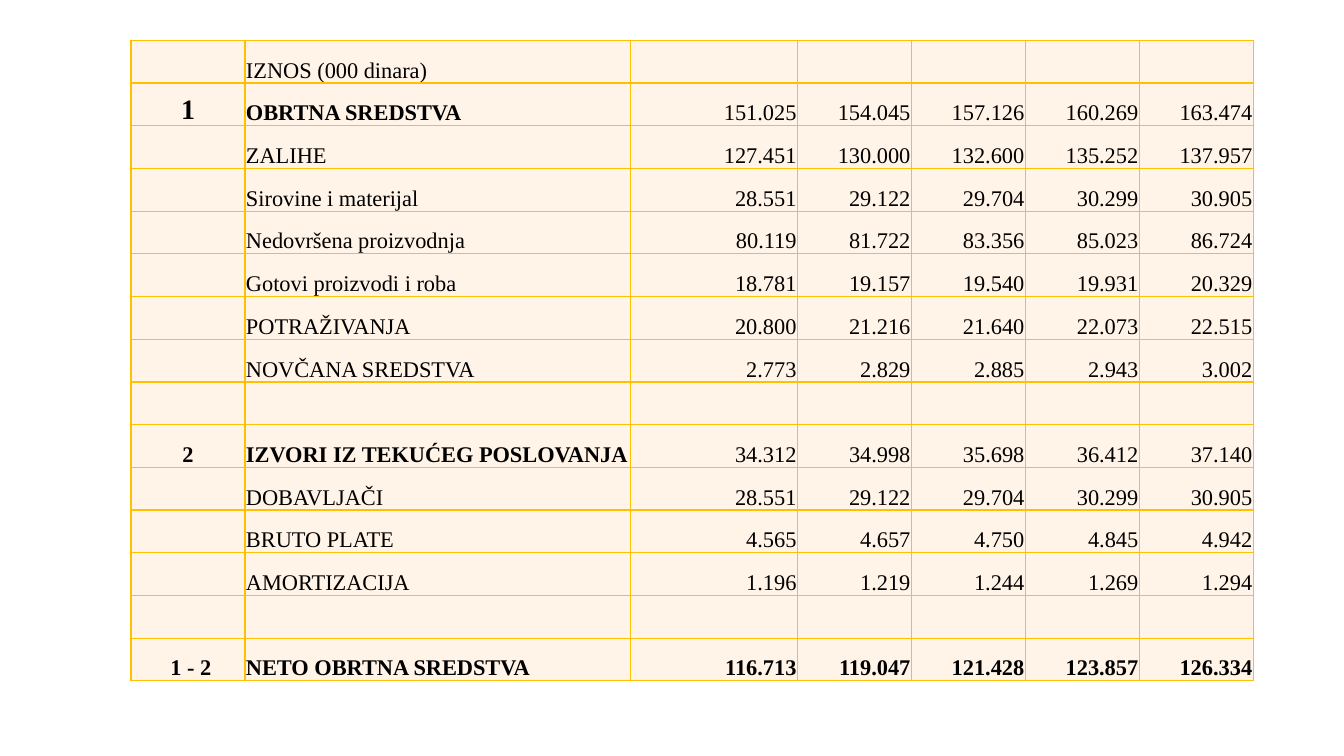
from lxml.etree import SubElement
from pptx import Presentation
from pptx.dml.color import RGBColor
from pptx.enum.text import MSO_ANCHOR, PP_ALIGN
from pptx.oxml.ns import qn
from pptx.util import Inches, Pt

COLORS = {"fill": "FFF4E7", "line": "FFC000", "text": "000000"}
FONT = "Times New Roman"
WIDTHS = [1.13, 3.82, 1.66] + [1.13] * 4
ROWS = [
    ("", "IZNOS (000 dinara)", ""),
    ("1", "OBRTNA SREDSTVA", "151.025 154.045 157.126 160.269 163.474"),
    ("", "ZALIHE", "127.451 130.000 132.600 135.252 137.957"),
    ("", "Sirovine i materijal", "28.551 29.122 29.704 30.299 30.905"),
    ("", "Nedovršena proizvodnja", "80.119 81.722 83.356 85.023 86.724"),
    ("", "Gotovi proizvodi i roba", "18.781 19.157 19.540 19.931 20.329"),
    ("", "POTRAŽIVANJA", "20.800 21.216 21.640 22.073 22.515"),
    ("", "NOVČANA SREDSTVA", "2.773 2.829 2.885 2.943 3.002"),
    ("", "", ""),
    ("2", "IZVORI IZ TEKUĆEG POSLOVANJA", "34.312 34.998 35.698 36.412 37.140"),
    ("", "DOBAVLJAČI", "28.551 29.122 29.704 30.299 30.905"),
    ("", "BRUTO PLATE", "4.565 4.657 4.750 4.845 4.942"),
    ("", "AMORTIZACIJA", "1.196 1.219 1.244 1.269 1.294"),
    ("", "", ""),
    (" 1 - 2", "NETO OBRTNA SREDSTVA", "116.713 119.047 121.428 123.857 126.334"),
]


def add_border(cell):
    props = cell._tc.get_or_add_tcPr()
    for side in ("lnL", "lnR", "lnT", "lnB"):
        line = SubElement(props, qn(f"a:{side}"), w=str(Pt(1)))
        fill = SubElement(line, qn("a:solidFill"))
        SubElement(fill, qn("a:srgbClr"), val=COLORS["line"])


# Slide
prs = Presentation()
prs.slide_width, prs.slide_height = Inches(13.33), Inches(7.5)
slide = prs.slides.add_slide(prs.slide_layouts[6])

# Table grid
frame = slide.shapes.add_table(len(ROWS), len(WIDTHS), Inches(1.3), Inches(0.4),
                               Inches(sum(WIDTHS)), Inches(6.36))
table = frame.table
table.first_row = table.horz_banding = False
for col, width in zip(table.columns, WIDTHS):
    col.width = Inches(width)

# Cells: number, label, then five amounts
for r, (num, label, sums) in enumerate(ROWS):
    texts = [num, label] + (sums.split() or [""] * 5)
    for c, text in enumerate(texts):
        cell = table.cell(r, c)
        add_border(cell)
        cell.fill.solid()
        cell.fill.fore_color.rgb = RGBColor.from_string(COLORS["fill"])
        cell.vertical_anchor = MSO_ANCHOR.BOTTOM
        cell.margin_left = cell.margin_right = cell.margin_top = Inches(0.01)
        cell.margin_bottom = 0
        cell.text = text
        para = cell.text_frame.paragraphs[0]
        para.alignment = (PP_ALIGN.CENTER, PP_ALIGN.LEFT)[c] if c < 2 else PP_ALIGN.RIGHT
        font = para.font
        font.name = FONT
        font.size = Pt(20 if text == "1" else 16)
        font.bold = bool(num) and (c < 2 or r == len(ROWS) - 1)
        font.color.rgb = RGBColor.from_string(COLORS["text"])

prs.save("out.pptx")
